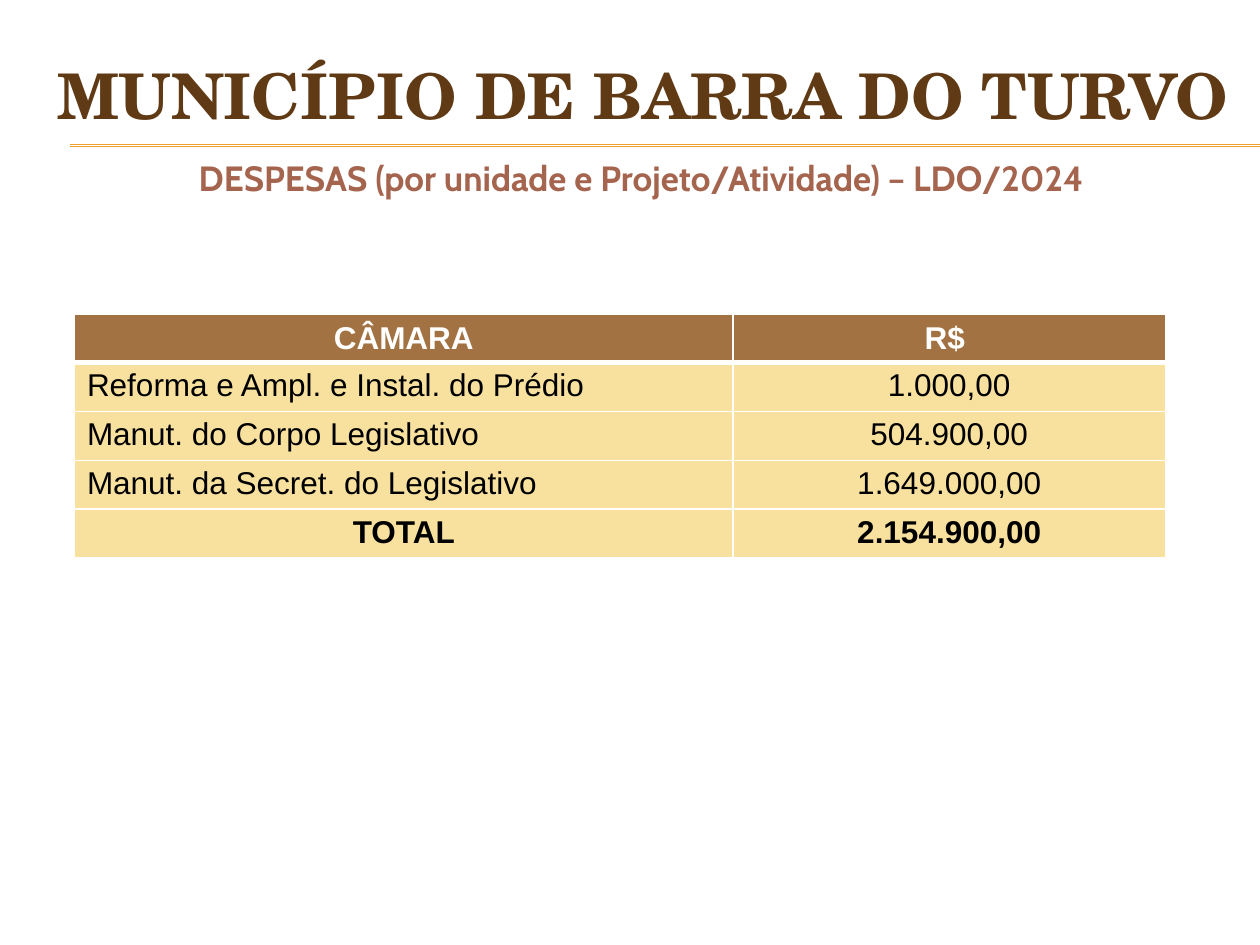
from lxml import etree
from pptx import Presentation
from pptx.dml.color import RGBColor
from pptx.enum import shapes, text
from pptx.oxml import ns
from pptx.util import Cm, Pt

HUES = {"title": "603A14", "sub": "A5644E", "rule": "F0A22E", "head": "A27242",
        "body": "F8E19F", "white": "FFFFFF", "black": "000000"}
ROWS = [("CÂMARA", "R$ "),
        ("Reforma e Ampl. e Instal. do Prédio", "1.000,00"),
        ("Manut. do Corpo Legislativo", "504.900,00"),
        ("Manut. da Secret. do Legislativo", "1.649.000,00"),
        ("TOTAL", "2.154.900,00")]
MID = text.PP_ALIGN.CENTER


def hue(name):
    return RGBColor.from_string(HUES[name])


def write(para, words, font, size, color, bold=True, align=MID):
    para.alignment = align
    run = para.add_run()
    run.text = words
    run.font.name, run.font.size, run.font.bold = font, Pt(size), bold
    run.font.color.rgb = hue(color)


def add_title(slide, x, y, w, h):
    title = slide.shapes.title
    title.left, title.top, title.width, title.height = Cm(x), Cm(y), Cm(w), Cm(h)
    frame = title.text_frame
    frame.margin_left = frame.margin_right = 0
    frame.auto_size = text.MSO_AUTO_SIZE.NONE
    frame.vertical_anchor = text.MSO_ANCHOR.MIDDLE
    write(frame.paragraphs[0], "MUNICÍPIO DE BARRA DO TURVO",
          "TeX Gyre Schola", 36, "title")


def add_rules(slide, x, y, w, gap):
    for top in (y, y + gap):
        rule = slide.shapes.add_connector(shapes.MSO_CONNECTOR.STRAIGHT,
                                          Cm(x), Cm(top), Cm(x + w), Cm(top))
        rule.line.color.rgb = hue("rule")
        rule.line.width = Pt(0.75)
        etree.SubElement(rule.line._get_or_add_ln().getparent(), ns.qn("a:effectLst"))


def add_sub(slide, x, y, w, h):
    frame = slide.shapes.add_textbox(Cm(x), Cm(y), Cm(w), Cm(h)).text_frame
    frame.word_wrap = True
    para = frame.paragraphs[0]
    para.line_spacing = 0.9
    para.space_before = Pt(4)
    write(para, "DESPESAS (por unidade e Projeto/Atividade) – LDO/2024",
          "Cabin", 20, "sub")


def add_edges(cell, widths):
    """Draw white borders; widths maps each side to points."""
    props = cell._tc.get_or_add_tcPr()
    for spot, side in enumerate("LRTB"):
        edge = etree.Element(ns.qn(f"a:ln{side}"), w=str(Pt(widths[side])))
        fill = etree.SubElement(edge, ns.qn("a:solidFill"))
        etree.SubElement(fill, ns.qn("a:srgbClr"), val=HUES["white"])
        props.insert(spot, edge)


def add_costs(slide, x, y, cols, step):
    table = slide.shapes.add_table(len(ROWS), len(cols), Cm(x), Cm(y),
                                   Cm(sum(cols)), Cm(step * len(ROWS))).table
    for col, wide in zip(table.columns, cols):
        col.width = Cm(wide)
    for r, row in enumerate(ROWS):
        table.rows[r].height = Cm(step)
        head, total = r == 0, r == len(ROWS) - 1
        for c, words in enumerate(row):
            cell = table.cell(r, c)
            cell.margin_top = cell.margin_bottom = Cm(0.11)
            if head:
                cell.vertical_anchor = text.MSO_ANCHOR.MIDDLE
            cell.fill.solid()
            cell.fill.fore_color.rgb = hue("head" if head else "body")
            add_edges(cell, {"L": 1, "R": 1, "T": 3 if r == 1 else 1,
                             "B": 3 if head else 1})
            left = c == 0 and not (head or total)
            write(cell.text_frame.paragraphs[0], words, "Arial", 18,
                  "white" if head else "black", head or total,
                  text.PP_ALIGN.LEFT if left else MID)


def main():
    deck = Presentation()
    deck.slide_width, deck.slide_height = Cm(25.4), Cm(19.05)
    slide = deck.slides.add_slide(deck.slide_layouts[5])
    # Heading
    add_rules(slide, 1.42, 2.92, 23.98, 0.03)
    add_title(slide, 0.89, 0.74, 24.13, 2.34)
    add_sub(slide, 1.5, 3.12, 22.86, 1.19)
    # Expenses by project
    add_costs(slide, 1.5, 6.33, (13.28, 8.71), 0.96)
    deck.save("out.pptx")


if __name__ == "__main__":
    main()
